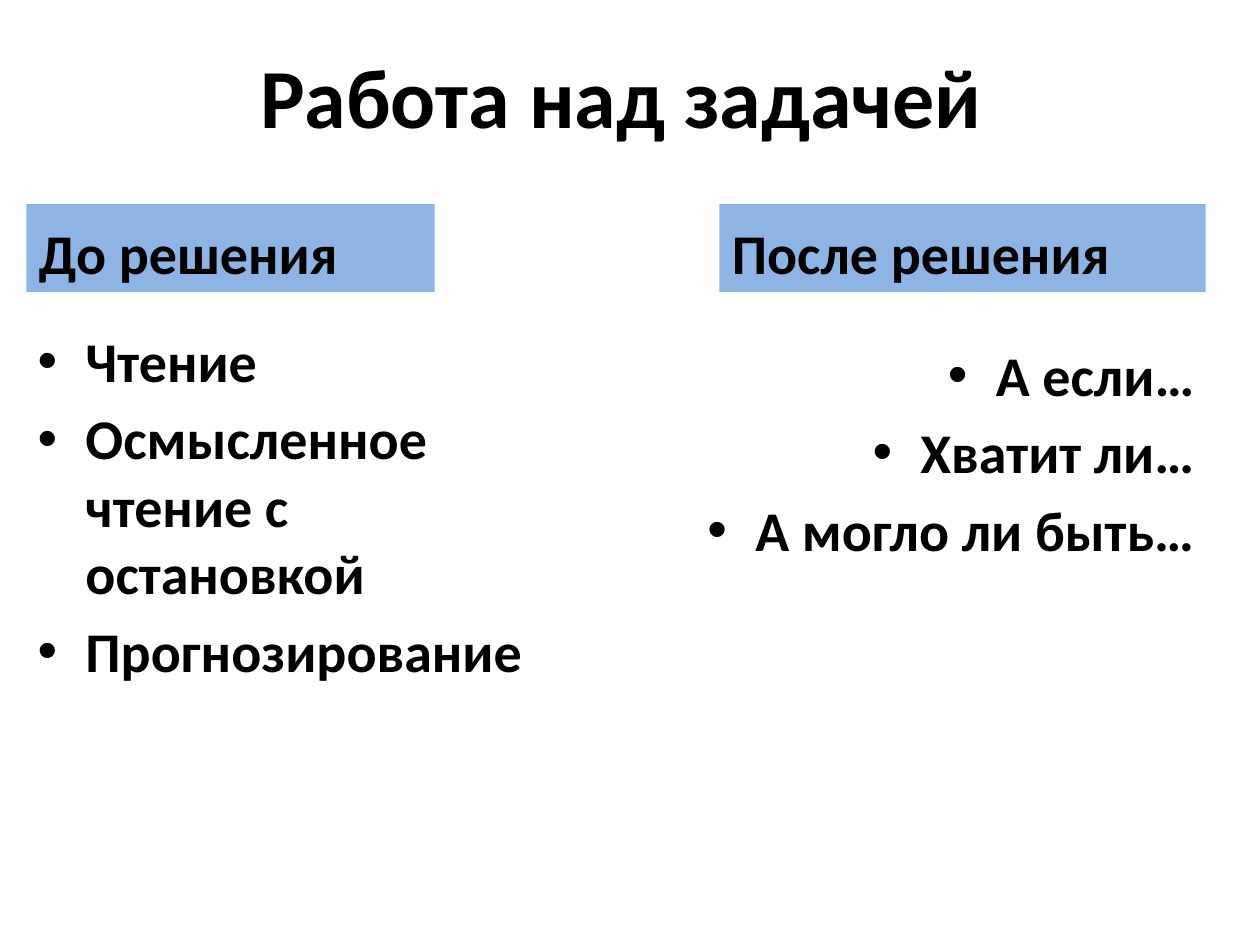
from lxml import etree
from pptx import Presentation
from pptx.dml.color import RGBColor
from pptx.enum.shapes import MSO_SHAPE
from pptx.enum.text import MSO_ANCHOR, PP_ALIGN
from pptx.oxml.ns import qn
from pptx.util import Inches, Pt

RECTANGLE = MSO_SHAPE.RECTANGLE
LEFT, CENTER, RIGHT = PP_ALIGN.LEFT, PP_ALIGN.CENTER, PP_ALIGN.RIGHT
TOP, MIDDLE, BOTTOM = MSO_ANCHOR.TOP, MSO_ANCHOR.MIDDLE, MSO_ANCHOR.BOTTOM


def color(hex_string):
    return RGBColor.from_string(hex_string)


def add_bullet(paragraph, indent):
    properties = paragraph._p.get_or_add_pPr()
    properties.set("marL", str(indent))
    properties.set("indent", str(-indent))
    font = etree.SubElement(properties, qn("a:buFont"))
    font.set("typeface", "Arial")
    bullet = etree.SubElement(properties, qn("a:buChar"))
    bullet.set("char", "•")


def write_text(frame, lines, size=32, align=LEFT, anchor=TOP, bullets=False,
               font="Calibri", text_color="000000"):
    frame.word_wrap = True
    frame.vertical_anchor = anchor
    for index, line in enumerate(lines):
        paragraph = frame.paragraphs[0] if index == 0 else frame.add_paragraph()
        paragraph.alignment = align
        if bullets:
            add_bullet(paragraph, Inches(0.38))
        if index:
            paragraph.space_before = Pt(6)
        run = paragraph.add_run()
        run.text = line
        run.font.name = font
        run.font.size = Pt(size)
        run.font.bold = True
        run.font.color.rgb = color(text_color)


class SlideBuilder:
    header_fill = "8EB4E3"

    def __init__(self, slide):
        self.slide = slide

    def text(self, left, top, width, height, lines, **style):
        box = self.slide.shapes.add_textbox(
            Inches(left), Inches(top), Inches(width), Inches(height))
        write_text(box.text_frame, lines, **style)

    def header(self, left, width, label):
        shape = self.slide.shapes.add_shape(
            RECTANGLE, Inches(left), Inches(1.62), Inches(width), Inches(0.7))
        shape.shadow.inherit = False
        shape.fill.solid()
        shape.fill.fore_color.rgb = color(self.header_fill)
        shape.line.fill.background()
        write_text(shape.text_frame, [label], anchor=BOTTOM)


def main():
    presentation = Presentation()
    presentation.slide_width = Inches(10)
    presentation.slide_height = Inches(7.5)
    slide = presentation.slides.add_slide(presentation.slide_layouts[6])
    builder = SlideBuilder(slide)

    # Title
    builder.text(0.43, 0.13, 9, 1.25, ["Работа над задачей"],
                 size=48, align=CENTER, anchor=MIDDLE)

    # Column headers
    builder.header(0.21, 3.24, "До решения")
    builder.header(5.71, 3.86, "После решения")

    # Column lists
    builder.text(5.16, 2.65, 4.42, 1.97,
                 ["А если…", "Хватит ли…", "А могло ли быть…"],
                 align=RIGHT, bullets=True)
    builder.text(0.2, 2.54, 4.11, 2.63,
                 ["Чтение", "Осмысленное чтение с остановкой", "Прогнозирование"],
                 bullets=True)

    presentation.save("out.pptx")


if __name__ == "__main__":
    main()
